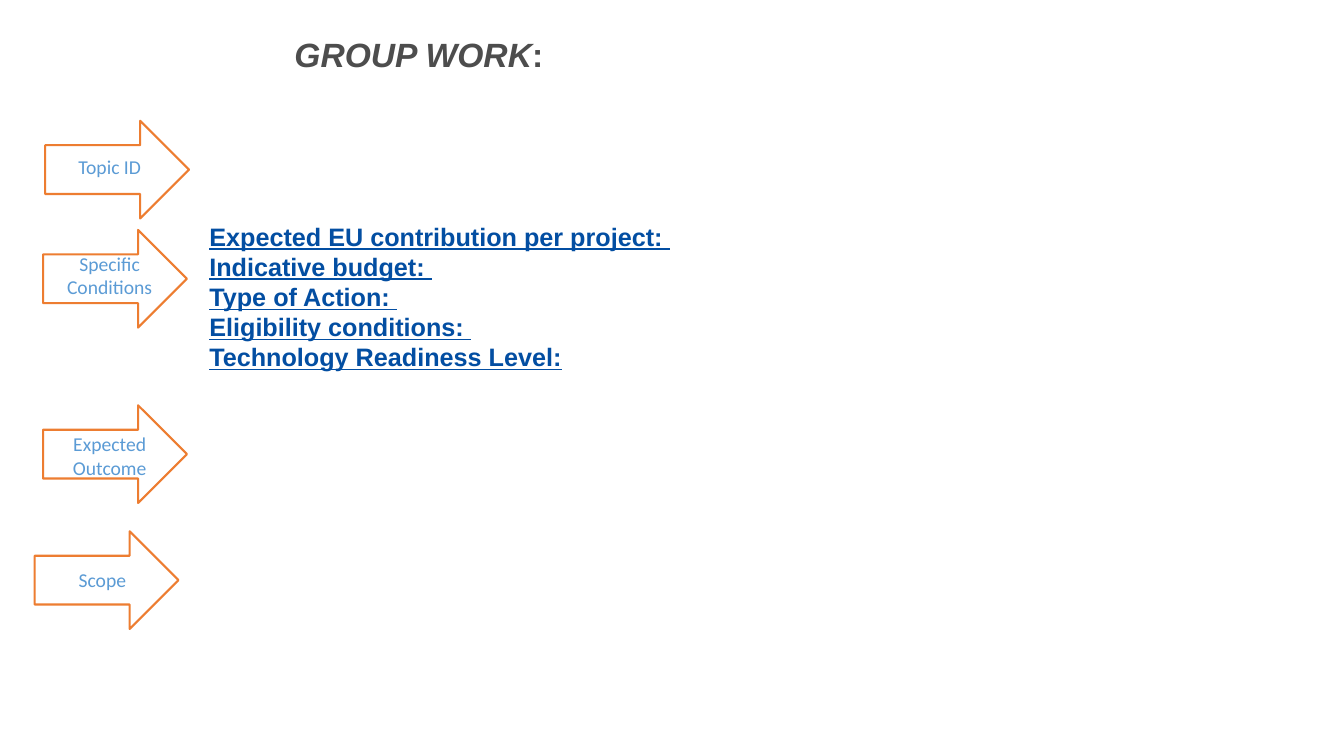
from dataclasses import dataclass

from pptx import Presentation
from pptx.dml.color import RGBColor
from pptx.enum.shapes import MSO_SHAPE
from pptx.enum.text import MSO_ANCHOR, PP_ALIGN
from pptx.util import Emu, Pt

EMU_PER_PX = 9525
RIGHT_ARROW = MSO_SHAPE.RIGHT_ARROW
TOP, BOTTOM = MSO_ANCHOR.TOP, MSO_ANCHOR.BOTTOM
LEFT, CENTER = PP_ALIGN.LEFT, PP_ALIGN.CENTER
ARROW_SIZE = (137, 93)


@dataclass(frozen=True)
class Theme:
    """Colours, fonts and type sizes of the slide."""
    title_color: RGBColor = RGBColor(0x4D, 0x4D, 0x4D)
    label_color: RGBColor = RGBColor(0x5B, 0x9B, 0xD5)
    body_color: RGBColor = RGBColor(0x03, 0x4E, 0xA2)
    arrow_color: RGBColor = RGBColor(0xED, 0x7D, 0x31)
    heading_font: str = "Arial"
    label_font: str = "Calibri"
    title_size: Pt = Pt(24)
    body_size: Pt = Pt(18)
    body_spacing: Pt = Pt(21.5)
    label_size: Pt = Pt(14)
    arrow_width: Pt = Pt(1.5)


THEME = Theme()

ARROWS = [
    ("Topic ID", (43, 115), (36, 143, 137, 33)),
    ("Specific Conditions", (41, 219), (43, 235, 123, 55)),
    ("Expected Outcome", (41, 386), (43, 407, 123, 55)),
    ("Scope", (33, 506), (36, 536, 123, 33)),
]

CONDITIONS = [
    "Expected EU contribution per project: ",
    "Indicative budget: ",
    "Type of Action: ",
    "Eligibility conditions: ",
    "Technology Readiness Level:",
]


def px(*lengths):
    """Turn pixel lengths into EMU."""
    return [Emu(length * EMU_PER_PX) for length in lengths]


def style_font(font, name, size, color):
    """Set the typeface, size and colour of a font."""
    font.name = name
    font.size = size
    font.color.rgb = color


def add_text(shapes, box, text, anchor=TOP, alignment=LEFT):
    """Add a wrapping text box and return its text frame."""
    text_frame = shapes.add_textbox(*px(*box)).text_frame
    text_frame.word_wrap = True
    text_frame.vertical_anchor = anchor
    text_frame.text = text
    for paragraph in text_frame.paragraphs:
        paragraph.alignment = alignment
    return text_frame


def add_title(slide):
    """Add the title with an upright colon after the italic words."""
    text_frame = add_text(slide.shapes, (271, 26, 310, 45), "GROUP WORK", BOTTOM)
    text_frame.margin_bottom = 0
    paragraph = text_frame.paragraphs[0]
    paragraph.add_run().text = ":"
    words, colon = paragraph.runs
    for run in (words, colon):
        style_font(run.font, THEME.heading_font, THEME.title_size, THEME.title_color)
        run.font.bold = True
    words.font.italic = True


def add_arrow(slide, label, position, label_box):
    """Add an outlined arrow grouped with its label."""
    group = slide.shapes.add_group_shape()
    arrow = group.shapes.add_shape(RIGHT_ARROW, *px(*position, *ARROW_SIZE))
    arrow.shadow.inherit = False
    arrow.fill.background()
    arrow.line.color.rgb = THEME.arrow_color
    arrow.line.width = THEME.arrow_width
    text_frame = add_text(group.shapes, label_box, label, alignment=CENTER)
    font = text_frame.paragraphs[0].runs[0].font
    style_font(font, THEME.label_font, THEME.label_size, THEME.label_color)


def add_conditions(slide):
    """Add the underlined list of conditions."""
    text_frame = add_text(slide.shapes, (190, 206, 860, 156), "\n".join(CONDITIONS))
    for paragraph in text_frame.paragraphs:
        paragraph.line_spacing = THEME.body_spacing
        font = paragraph.runs[0].font
        style_font(font, THEME.heading_font, THEME.body_size, THEME.body_color)
        font.bold = True
        font.underline = True


def main():
    """Build the slide and save it."""
    presentation = Presentation()
    presentation.slide_width, presentation.slide_height = px(1280, 720)
    slide = presentation.slides.add_slide(presentation.slide_layouts[6])
    add_title(slide)
    for label, position, label_box in ARROWS:
        add_arrow(slide, label, position, label_box)
    add_conditions(slide)
    presentation.save("out.pptx")


if __name__ == "__main__":
    main()
